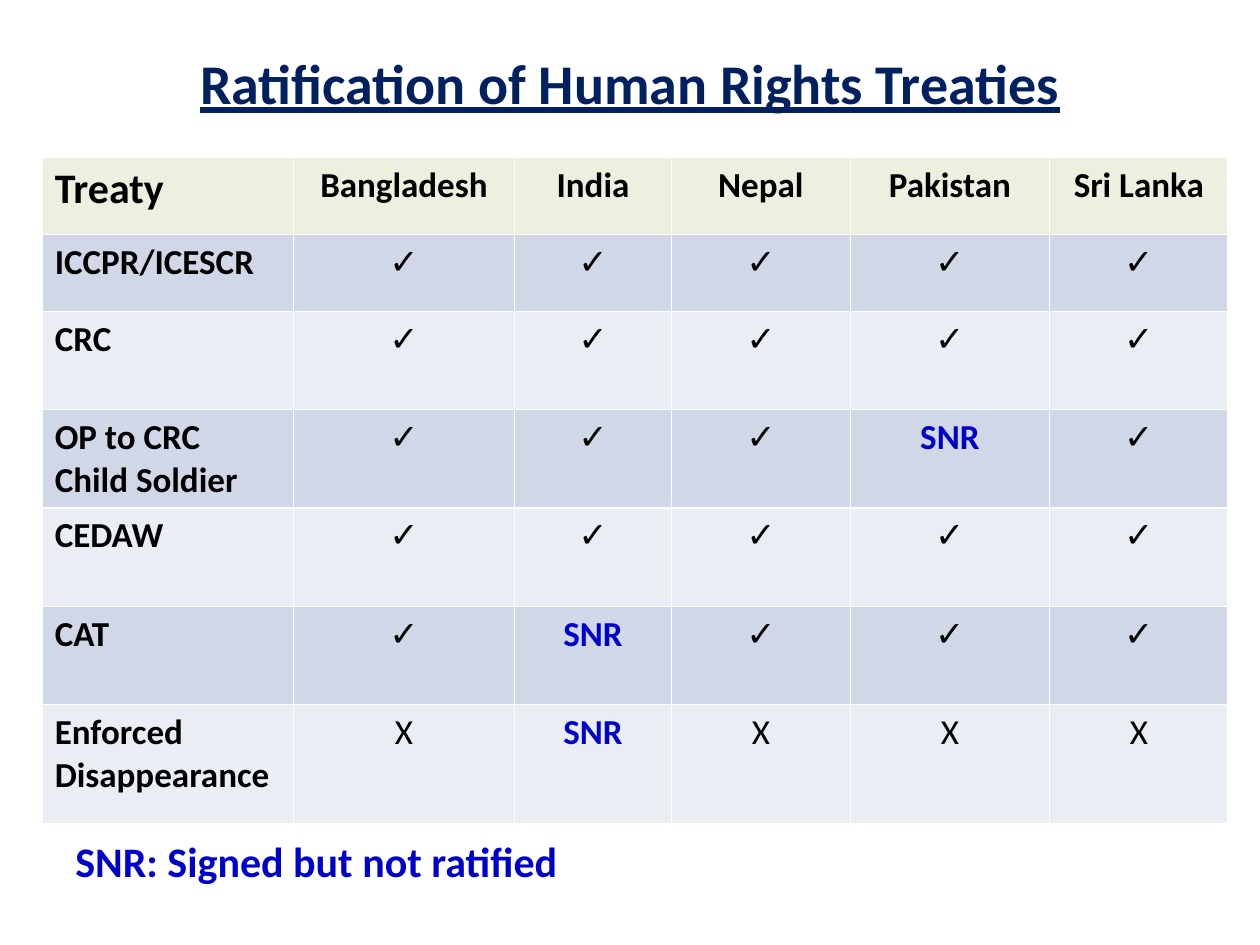
from pptx import Presentation
from pptx.dml.color import RGBColor
from pptx.enum.text import MSO_ANCHOR, PP_ALIGN
from pptx.util import Cm, Pt

NAVY = RGBColor(0x00, 0x20, 0x60)
BLUE = RGBColor(0x00, 0x00, 0xCC)
BLACK = RGBColor(0x00, 0x00, 0x00)
HEADER_FILL = RGBColor(0xEB, 0xF1, 0xDE)
BAND_FILLS = [RGBColor(0xE9, 0xED, 0xF4), RGBColor(0xD0, 0xD8, 0xE8)]

YES, NO, SNR = "✓", "X", "SNR"
RATIFICATIONS = [
    ["Treaty", "Bangladesh", "India", "Nepal", "Pakistan", "Sri Lanka"],
    ["ICCPR/ICESCR", YES, YES, YES, YES, YES],
    ["CRC", YES, YES, YES, YES, YES],
    ["OP to CRC\nChild Soldier", YES, YES, YES, SNR, YES],
    ["CEDAW", YES, YES, YES, YES, YES],
    ["CAT", YES, SNR, YES, YES, YES],
    ["Enforced\nDisappearance", NO, SNR, NO, NO, NO],
]
COLUMN_WIDTHS = [5.07, 4.45, 3.17, 3.6, 4.02, 3.6]
ROW_HEIGHTS = [1.55, 1.55, 1.98, 1.98, 1.98, 1.98, 2.41]


def format_text(frame, size, color, bold, align=PP_ALIGN.LEFT):
    for paragraph in frame.paragraphs:
        paragraph.alignment = align
        for run in paragraph.runs:
            run.font.name = "Calibri"
            run.font.size = Pt(size)
            run.font.bold = bold
            run.font.color.rgb = color


prs = Presentation()
prs.slide_width, prs.slide_height = Cm(25.4), Cm(19.05)
slide = prs.slides.add_slide(prs.slide_layouts[5])

# Title
title = slide.shapes.title
title.left, title.top, title.width, title.height = Cm(1.27), Cm(0.85), Cm(22.86), Cm(1.9)
title.text_frame.text = "Ratification of Human Rights Treaties"
title.text_frame.vertical_anchor = MSO_ANCHOR.TOP
format_text(title.text_frame, 32, NAVY, True, PP_ALIGN.CENTER)
title.text_frame.paragraphs[0].runs[0].font.underline = True

# Ratification table
treaties = slide.shapes.add_table(
    len(ROW_HEIGHTS), len(COLUMN_WIDTHS), Cm(0.85), Cm(3.18),
    Cm(sum(COLUMN_WIDTHS)), Cm(sum(ROW_HEIGHTS))).table
for column, width in zip(treaties.columns, COLUMN_WIDTHS):
    column.width = Cm(width)
for row, height in zip(treaties.rows, ROW_HEIGHTS):
    row.height = Cm(height)

for r, entries in enumerate(RATIFICATIONS):
    for c, entry in enumerate(entries):
        cell = treaties.cell(r, c)
        cell.fill.solid()
        cell.fill.fore_color.rgb = BAND_FILLS[r % 2] if r else HEADER_FILL
        cell.text_frame.text = entry
        format_text(
            cell.text_frame,
            size=24 if entry == "Treaty" else 20,
            color=BLUE if entry == SNR else BLACK,
            bold=entry not in (YES, NO),
            align=PP_ALIGN.CENTER if c else PP_ALIGN.LEFT)

# Legend
legend = slide.shapes.add_textbox(Cm(1.27), Cm(16.71), Cm(10.8), Cm(2.06))
legend.text_frame.word_wrap = True
legend.text_frame.text = "SNR: Signed but not ratified"
format_text(legend.text_frame, 24, BLUE, True)

prs.save("out.pptx")
